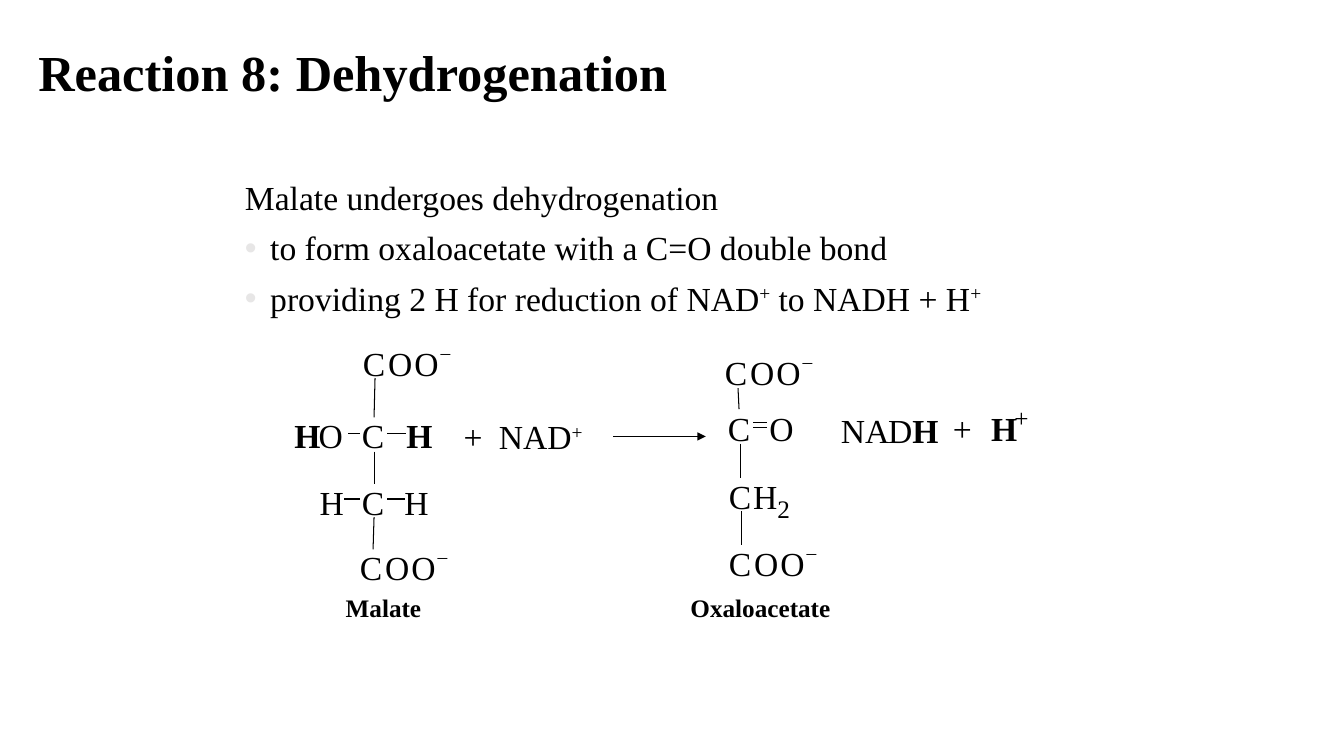
from lxml.etree import SubElement
from pptx import Presentation
from pptx.dml.color import RGBColor
from pptx.enum.shapes import MSO_CONNECTOR as Connector
from pptx.enum.text import MSO_ANCHOR as Anchor, MSO_AUTO_SIZE as AutoSize, PP_ALIGN as Align
from pptx.oxml.ns import qn
from pptx.util import Emu, Pt

PX = 9144  # one px is a hundredth of an inch
BLACK = RGBColor(0x00, 0x00, 0x00)
BULLET_GREY = RGBColor(0xE7, 0xE6, 0xE6)
FONT = "Times New Roman"
ATOM_WIDTH = {"C": 22, "–": 11, "+": 19, "2": 12}


def px(*lengths):
    return [Emu(length * PX) for length in lengths]


def add_span(para, text, size=24, bold=False, raised=False):
    span = para.add_run()
    span.text = text
    span.font.name, span.font.size, span.font.bold = FONT, Pt(size), bold
    span.font.color.rgb = BLACK
    if raised:
        span._r.get_or_add_rPr().set("baseline", "30000")
    return span


class Slide:
    def __init__(self, deck):
        self.page = deck.slides.add_slide(deck.slide_layouts[1])
        self.canvas = self.page.shapes

    def start_group(self):
        self.canvas = self.page.shapes.add_group_shape().shapes

    def end_group(self):
        self.canvas = self.page.shapes

    def place(self, box, left, top, width, height):
        box.left, box.top, box.width, box.height = px(left, top, width, height)
        box.text_frame.auto_size = AutoSize.NONE

    def title(self, text, *bounds):
        box = self.page.shapes.title
        self.place(box, *bounds)
        box.text_frame.vertical_anchor = Anchor.MIDDLE
        para = box.text_frame.paragraphs[0]
        para.alignment, para.line_spacing = Align.LEFT, 0.9
        add_span(para, text, size=36, bold=True)

    def body(self, items, *bounds):
        box = self.page.placeholders[1]
        self.place(box, *bounds)
        frame = box.text_frame
        for index, (bulleted, pieces) in enumerate(items):
            para = frame.add_paragraph() if index else frame.paragraphs[0]
            para.line_spacing, para.space_before = 0.9, Pt(10)
            props = para._p.get_or_add_pPr()
            props.set("marL", str(25 * PX))
            props.set("indent", str(-25 * PX))
            if bulleted:
                colour = SubElement(props, qn("a:buClr"))
                SubElement(colour, qn("a:srgbClr"), val=str(BULLET_GREY))
                SubElement(props, qn("a:buChar"), char="•")
            else:
                SubElement(props, qn("a:buNone"))
            for text in pieces:
                add_span(para, text, raised=text == "+")

    def text(self, pieces, left, top, width, height, tab=None, **style):
        box = self.canvas.add_textbox(*px(left, top, width, height))
        box.text_frame.word_wrap = True
        box.text_frame.auto_size = AutoSize.SHAPE_TO_FIT_TEXT
        para = box.text_frame.paragraphs[0]
        if tab:
            stops = SubElement(para._p.get_or_add_pPr(), qn("a:tabLst"))
            SubElement(stops, qn("a:tab"), pos=str(tab * PX), algn="l")
        for text in pieces:
            add_span(para, text, raised=text == "+", **style)

    def atom(self, symbol, left, top, size=24, bold=False, raised=False):
        width = 26 if bold else ATOM_WIDTH.get(symbol, 24)
        height = 27 if raised else 40 * size // 24
        box = self.canvas.add_textbox(*px(left, top, width, height))
        frame = box.text_frame
        frame.margin_left = frame.margin_top = frame.margin_right = frame.margin_bottom = 0
        frame.word_wrap, frame.auto_size = False, AutoSize.SHAPE_TO_FIT_TEXT
        add_span(frame.paragraphs[0], symbol, size, bold, raised)

    def carboxylate(self, left, top):
        for symbol, shift in (("C", 0), ("O", 25), ("O", 51)):
            self.atom(symbol, left + shift, top)
        self.atom("–", left + 77, top - 7, raised=True)

    def line(self, x1, y1, x2, y2, weight=0.75, arrow=False):
        line = self.canvas.add_connector(Connector.STRAIGHT, *px(x1, y1, x2, y2))
        line.line.color.rgb, line.line.width = BLACK, Pt(weight)
        props = line._element.find(qn("p:spPr"))
        if arrow:
            SubElement(props.find(qn("a:ln")), qn("a:tailEnd"), type="triangle")
        SubElement(props, qn("a:effectLst"))


def draw_malate(slide):
    slide.start_group()
    # Bonds
    for bond in ((372, 375, 371, 414), (371, 448, 371, 480), (371, 513, 370, 545),
                 (357, 430, 345, 430), (384, 430, 403, 430)):
        slide.line(*bond)
    for bond in ((357, 495, 341, 495), (384, 495, 402, 495)):
        slide.line(*bond, weight=1.5)
    # Atoms
    slide.carboxylate(360, 340)
    for symbol, left, bold in (("H", 292, True), ("O", 316, False),
                               ("C", 359, False), ("H", 403, True)):
        slide.atom(symbol, left, 412, bold=bold)
    for symbol, left in (("H", 317), ("C", 359), ("H", 401)):
        slide.atom(symbol, left, 478)
    slide.carboxylate(357, 543)
    slide.end_group()


def draw_products(slide):
    slide.start_group()
    # Bonds
    for bond in ((733, 406, 732, 385), (734, 440, 734, 474), (735, 507, 735, 541),
                 (747, 419, 761, 419), (747, 424, 761, 424)):
        slide.line(*bond)
    # Oxaloacetate atoms
    slide.carboxylate(719, 349)
    slide.atom("C", 722, 405)
    slide.atom("O", 763, 405)
    slide.atom("C", 723, 472)
    slide.atom("H", 747, 472)
    slide.atom("2", 771, 489, size=18)
    slide.carboxylate(723, 539)
    # NADH and proton
    for symbol, left in (("N", 834), ("A", 858), ("D", 881)):
        slide.atom(symbol, left, 407)
    slide.atom("H", 905, 407, bold=True)
    slide.atom("+", 945, 405)
    slide.atom("H", 983, 405, bold=True)
    slide.atom("+", 1006, 399, size=18)
    slide.end_group()


def main():
    deck = Presentation()
    deck.slide_width, deck.slide_height = px(1333, 750)
    slide = Slide(deck)

    # Title and list
    slide.title("Reaction 8: Dehydrogenation", 28, 25, 1169, 100)
    slide.body([
        (False, ["Malate undergoes dehydrogenation"]),
        (True, ["to form oxaloacetate with a C=O double bond"]),
        (True, ["providing 2 H for reduction of NAD", "+", " to NADH + H", "+"]),
    ], 233, 175, 858, 483)

    # Reaction
    slide.line(608, 433, 700, 433, arrow=True)
    slide.text(["+\tNAD", "+"], 450, 408, 150, 50, tab=35)
    draw_products(slide)
    draw_malate(slide)

    # Names
    slide.text(["Malate"], 333, 583, 175, 40, size=18, bold=True)
    slide.text(["Oxaloacetate"], 675, 583, 208, 40, size=18, bold=True)
    deck.save("out.pptx")


if __name__ == "__main__":
    main()
